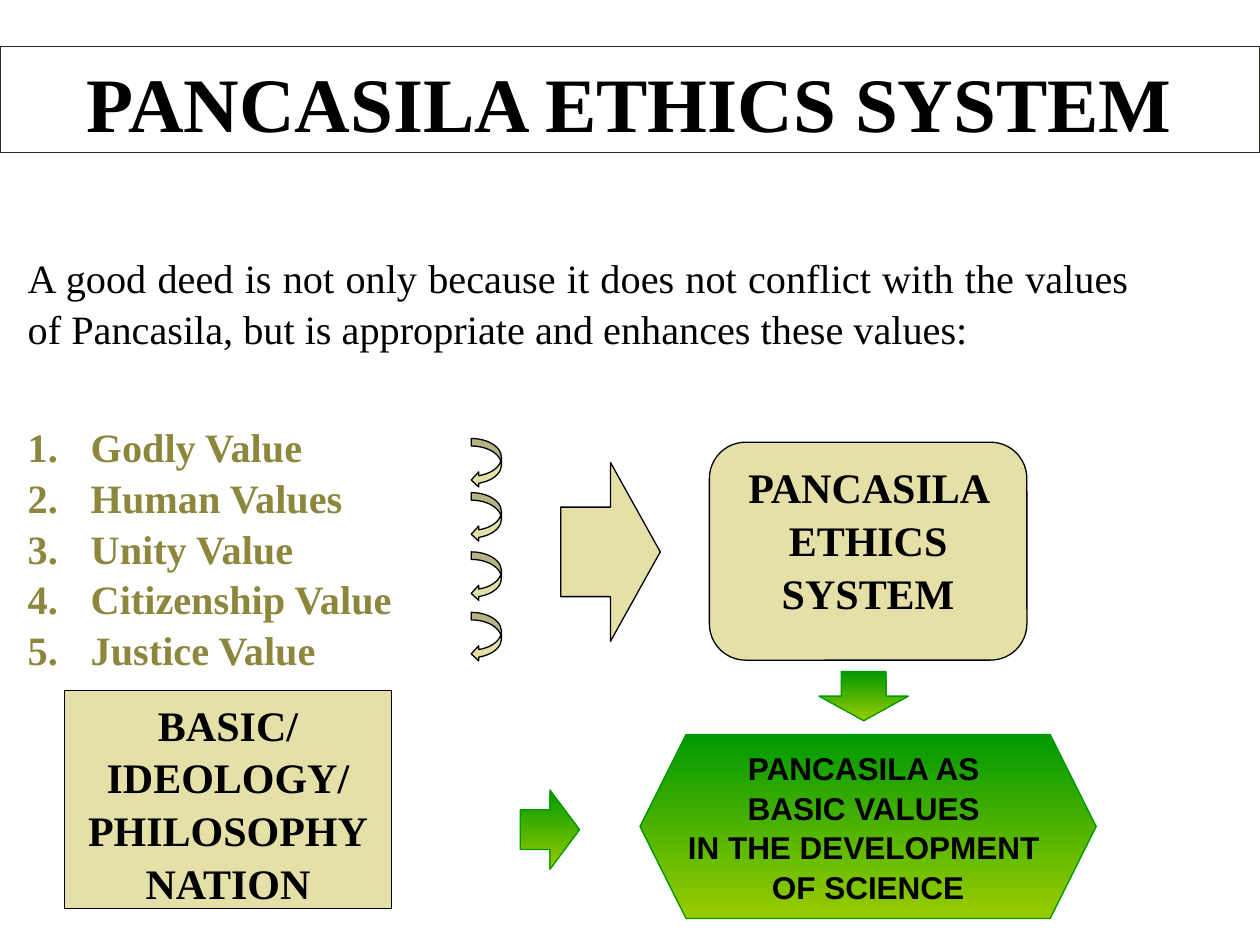
"""Build the Pancasila ethics system slide."""
from pptx import Presentation
from pptx.dml.color import RGBColor
from pptx.enum.shapes import MSO_SHAPE as Shape
from pptx.enum.text import MSO_ANCHOR as Anchor, MSO_AUTO_SIZE as AutoSize, PP_ALIGN as Align
from pptx.oxml.xmlchemy import OxmlElement
from pptx.util import Inches, Pt

COLORS = {"black": "000000", "white": "FFFFFF", "sand": "E4E0A7", "olive": "8D873E",
          "brown": "2F2B20", "green": "009900", "lime": "99CC00"}
SERIF, SANS = "Times New Roman", "Arial"


class SlideBuilder:
    """Holds the slide style and adds each kind of element."""

    def __init__(self, slide):
        self.slide = slide
        self.line_spacing = 1.05
        self.line_width = Pt(0.75)

    def color(self, name):
        return RGBColor.from_string(COLORS[name])

    def place(self, box, area):
        for name, value in zip(("left", "top", "width", "height"), area):
            setattr(box, name, Inches(value))

    def outline(self, box, line):
        box.line.color.rgb = self.color(line)
        box.line.width = self.line_width

    def style_para(self, para, size, font=SERIF, bold=True, color="black",
                   align=Align.CENTER, after=0):
        layout = {"alignment": align, "line_spacing": self.line_spacing,
                  "space_before": Pt(0), "space_after": Pt(after)}
        for name, value in layout.items():
            setattr(para, name, value)
        for span in para.runs:
            for name, value in {"size": Pt(size), "name": font, "bold": bold}.items():
                setattr(span.font, name, value)
            span.font.color.rgb = self.color(color)

    def fill_text(self, box, lines, size, font=SERIF, anchor=Anchor.TOP, wrap=True):
        frame = box.text_frame
        frame.text = "\n".join(lines)
        frame.word_wrap, frame.vertical_anchor = wrap, anchor
        frame.auto_size = AutoSize.NONE
        for para in frame.paragraphs:
            self.style_para(para, size, font)

    def number(self, para, scheme=None, indent=0):
        properties = para._p.get_or_add_pPr()
        properties.set("marL", str(Inches(indent)))
        properties.set("indent", str(-Inches(indent)))
        bullet = OxmlElement("a:buAutoNum" if scheme else "a:buNone")
        if scheme:
            bullet.set("type", scheme)
        properties.append(bullet)

    def title(self, text, area):
        box = self.slide.shapes.title
        self.place(box, area)
        box.fill.solid()
        box.fill.fore_color.rgb = self.color("white")
        self.outline(box, "brown")
        self.fill_text(box, [text], 44, anchor=Anchor.MIDDLE)

    def body(self, intro, values, area):
        box = self.slide.placeholders[1]
        self.place(box, area)
        self.fill_text(box, [intro, *values], 23)
        first, *items = box.text_frame.paragraphs
        self.number(first)
        self.style_para(first, 23, bold=False, align=Align.JUSTIFY, after=39)
        for item in items:
            self.number(item, "arabicPeriod", 0.5)
            self.style_para(item, 23, color="olive", align=Align.JUSTIFY)

    def sand_shape(self, kind, area):
        box = self.slide.shapes.add_shape(kind, *map(Inches, area))
        box.shadow.inherit = False
        box.fill.solid()
        box.fill.fore_color.rgb = self.color("sand")
        self.outline(box, "black")
        return box

    def green_shape(self, kind, area):
        box = self.sand_shape(kind, area)
        box.fill.gradient()
        box.fill.gradient_angle = 270
        for position, (stop, name) in enumerate(zip(box.fill.gradient_stops, ("green", "lime"))):
            stop.position = position
            stop.color.rgb = self.color(name)
        self.outline(box, "green")
        return box


def main():
    deck = Presentation()
    deck.slide_width, deck.slide_height = Inches(10), Inches(7.5)
    page = SlideBuilder(deck.slides.add_slide(deck.slide_layouts[1]))

    page.title("PANCASILA ETHICS SYSTEM", (0, 0.37, 10, 0.84))
    page.body("A good deed is not only because it does not conflict with the values "
              "of Pancasila, but is appropriate and enhances these values:",
              ["Godly Value", "Human Values", "Unity Value", "Citizenship Value", "Justice Value"],
              (0.12, 1.94, 8.95, 3.36))

    for top in (3.48, 3.91, 4.38, 4.86):
        page.sand_shape(Shape.CURVED_LEFT_ARROW, (3.74, top, 0.24, 0.39))
    page.sand_shape(Shape.RIGHT_ARROW, (4.45, 3.67, 0.79, 1.42))

    system = page.sand_shape(Shape.ROUNDED_RECTANGLE, (5.63, 3.51, 2.52, 1.73))
    page.fill_text(system, ["PANCASILA ETHICS SYSTEM"], 24)
    basis = page.sand_shape(Shape.RECTANGLE, (0.51, 5.48, 2.6, 1.73))
    page.fill_text(basis, ["BASIC/", "IDEOLOGY/", "PHILOSOPHY", "NATION"], 24)

    science = page.green_shape(Shape.HEXAGON, (5.08, 5.83, 3.62, 1.46))
    page.fill_text(science, ["PANCASILA AS ", "BASIC VALUES ", "IN THE DEVELOPMENT ", "OF SCIENCE"],
                   18, SANS, Anchor.MIDDLE, wrap=False)
    page.green_shape(Shape.DOWN_ARROW, (6.5, 5.33, 0.71, 0.39))
    page.green_shape(Shape.RIGHT_ARROW, (4.13, 6.27, 0.47, 0.63))

    deck.save("out.pptx")


if __name__ == "__main__":
    main()
